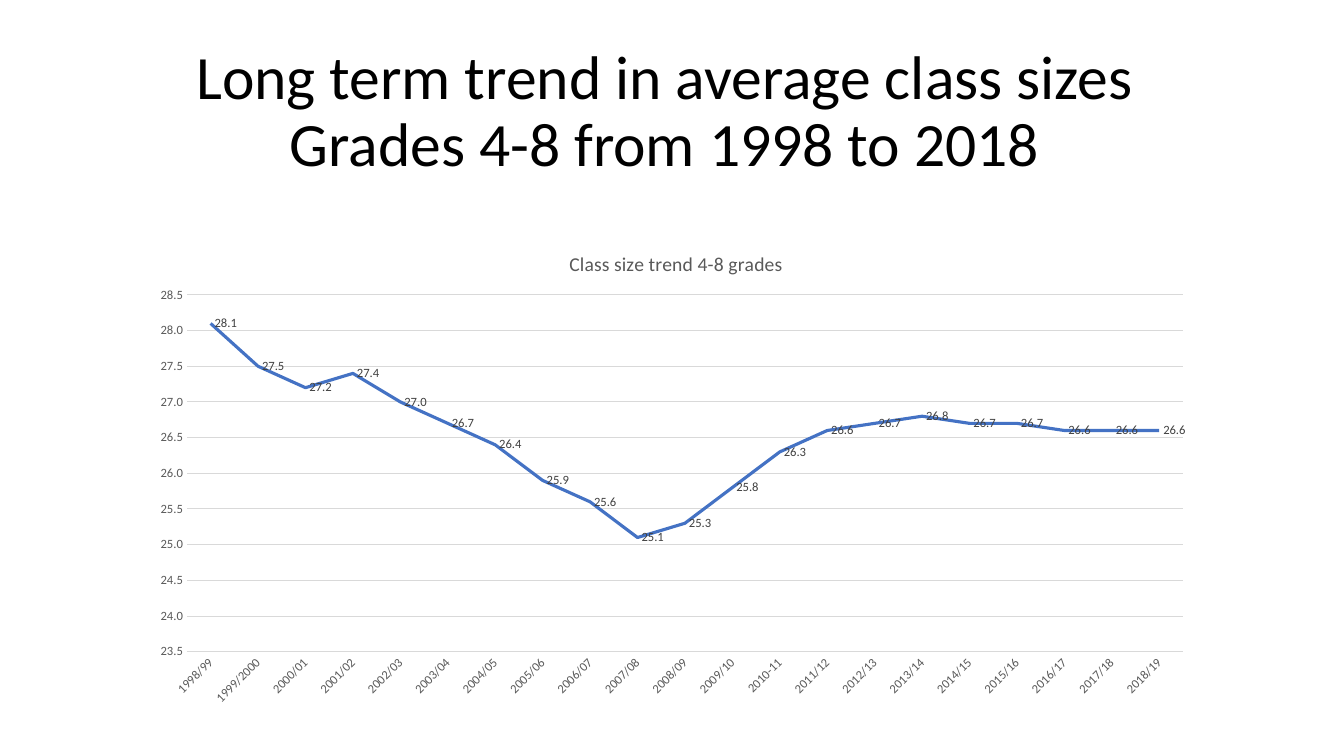
"""Build a slide with a line chart of average class sizes."""
import dataclasses
import typing

import lxml.etree
import pptx
import pptx.chart.data
import pptx.dml.color
import pptx.enum.chart
import pptx.enum.text
import pptx.oxml.ns
import pptx.util

FONT = "Calibri"
COLORS = {"black": "000000", "label": "404040", "text": "595959",
          "grid": "D9D9D9", "line": "4472C4"}
YEARS = ["1998/99", "1999/2000", "2000/01", "2001/02", "2002/03", "2003/04",
         "2004/05", "2005/06", " 2006/07", "2007/08", "2008/09", "2009/10",
         "2010-11", "2011/12", "2012/13", "2013/14", "2014/15", "2015/16",
         "2016/17", "2017/18", "2018/19"]
SIZES = [28.1, 27.5, 27.2, 27.4, 27.0, 26.7, 26.4, 25.9, 25.6, 25.1, 25.3,
         25.8, 26.3, 26.6, 26.7, 26.8, 26.7, 26.7, 26.6, 26.6, 26.6]


@dataclasses.dataclass
class Box:
    left: float
    top: float
    width: float
    height: float

    def cm(self) -> list[pptx.util.Cm]:
        return [pptx.util.Cm(part) for part in dataclasses.astuple(self)]


def put(target: typing.Any, values: dict[str, typing.Any]) -> None:
    for name, value in values.items():
        setattr(target, name, value)


def paint(color: str) -> pptx.dml.color.RGBColor:
    return pptx.dml.color.RGBColor.from_string(COLORS[color])


def style(font: typing.Any, size: float, color: str) -> None:
    put(font, {"name": FONT, "size": pptx.util.Pt(size), "bold": False})
    font.color.rgb = paint(color)


def stroke(line: typing.Any, color: str, width: float) -> None:
    line.color.rgb = paint(color)
    line.width = pptx.util.Pt(width)


def place(parent: typing.Any, index: int, values: dict[str, typing.Any]) -> None:
    tag = pptx.oxml.ns.qn
    for old in parent.findall(tag("c:layout")):
        parent.remove(old)
    layout = lxml.etree.Element(tag("c:layout"))
    manual = lxml.etree.SubElement(layout, tag("c:manualLayout"))
    for name, value in values.items():
        lxml.etree.SubElement(manual, tag(f"c:{name}")).set("val", str(value))
    parent.insert(index, layout)


def add_title(slide: typing.Any, box: Box, text: str) -> None:
    frame = slide.shapes.add_textbox(*box.cm()).text_frame
    put(frame, {"word_wrap": True,
                "vertical_anchor": pptx.enum.text.MSO_ANCHOR.MIDDLE})
    line = frame.paragraphs[0]
    put(line, {"text": text, "line_spacing": 0.9,
               "alignment": pptx.enum.text.PP_ALIGN.CENTER})
    for run in line.runs:
        style(run.font, 44, "black")


def add_trend(slide: typing.Any, box: Box) -> None:
    data = pptx.chart.data.CategoryChartData(number_format="0.0")
    data.categories = YEARS
    data.add_series("Series 1", SIZES)
    kind = pptx.enum.chart.XL_CHART_TYPE.LINE
    chart = slide.shapes.add_chart(kind, *box.cm(), data).chart
    put(chart, {"has_legend": False, "has_title": True})
    style(chart.font, 10, "black")
    plot = chart.plots[0]
    plot.vary_by_categories = False

    head = chart.chart_title.text_frame
    head.text = "Class size trend 4-8 grades"
    style(head.paragraphs[0].runs[0].font, 14, "text")

    none = pptx.enum.chart.XL_TICK_MARK.NONE
    for axis in (chart.category_axis, chart.value_axis):
        put(axis, {"major_tick_mark": none, "minor_tick_mark": none})
        style(axis.tick_labels.font, 9, "text")
    stroke(chart.category_axis.format.line, "grid", 0.75)
    turn = chart.element.xpath(".//c:catAx/c:txPr/a:bodyPr")[0]
    turn.set("rot", "-2700000")

    scale = chart.value_axis
    put(scale, {"minimum_scale": 23.5, "maximum_scale": 28.5,
                "major_unit": 0.5, "has_major_gridlines": True})
    put(scale.tick_labels, {"number_format": "0.0",
                            "number_format_is_linked": False})
    scale.format.line.fill.background()
    stroke(scale.major_gridlines.format.line, "grid", 0.75)

    trend = plot.series[0]
    trend.smooth = False
    trend.marker.style = pptx.enum.chart.XL_MARKER_STYLE.NONE
    stroke(trend.format.line, "line", 2.25)
    labels = trend.data_labels
    put(labels, {"show_value": True, "number_format": "0.0",
                 "number_format_is_linked": False,
                 "position": pptx.enum.chart.XL_LABEL_POSITION.RIGHT})
    style(labels.font, 9, "label")

    edge = {"xMode": "edge", "yMode": "edge"}
    place(chart.element.xpath("c:chart/c:title")[0], 1,
          edge | {"x": 0.4, "y": 0.04})
    place(chart.element.xpath("c:chart/c:plotArea")[0], 0,
          {"layoutTarget": "inner"} | edge
          | {"x": 0.044, "y": 0.139, "w": 0.936, "h": 0.73})


def main() -> None:
    deck = pptx.Presentation()
    put(deck, {"slide_width": pptx.util.Cm(33.87),
               "slide_height": pptx.util.Cm(19.05)})
    slide = deck.slides.add_slide(deck.slide_layouts[6])
    add_title(slide, Box(2.33, 1.01, 29.21, 3.68),
              "Long term trend in average class sizes \v"
              "Grades 4-8 from 1998 to 2018 ")
    add_trend(slide, Box(3.53, 5.72, 26.82, 12.32))
    deck.save("out.pptx")


if __name__ == "__main__":
    main()
